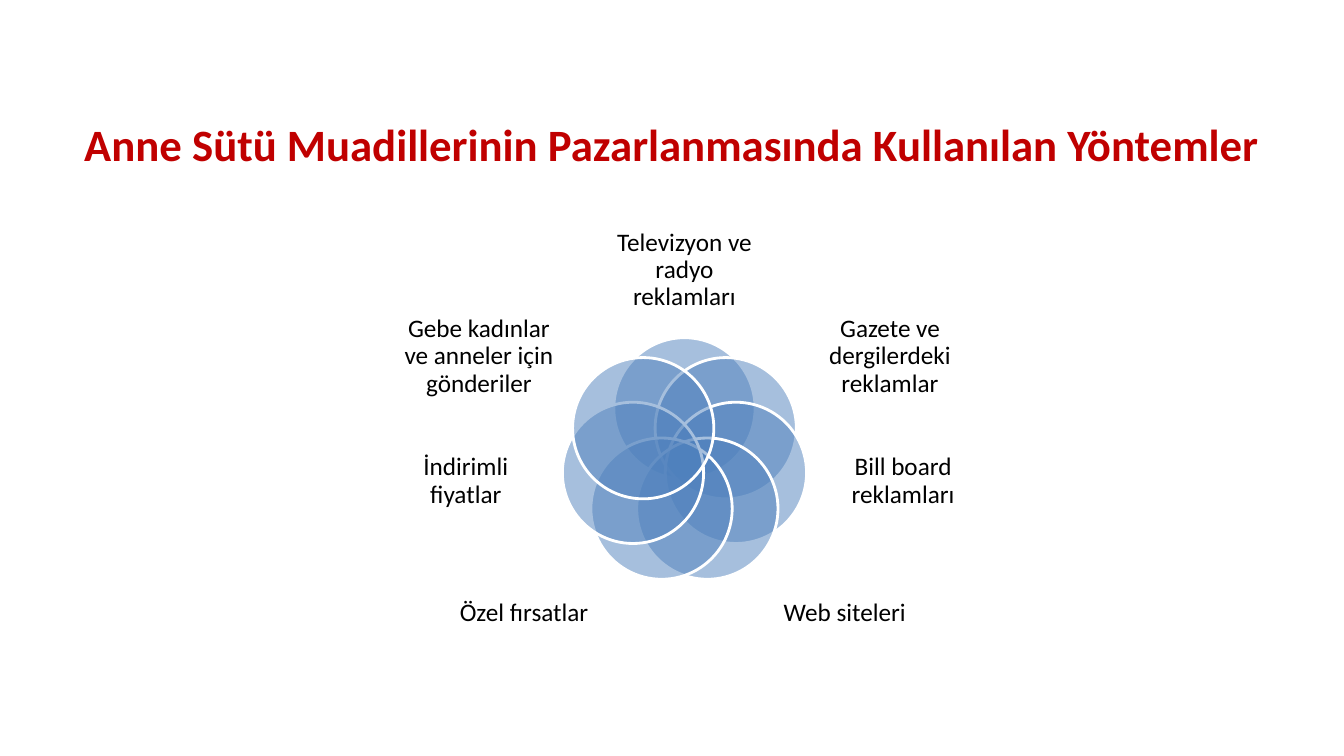
from dataclasses import dataclass
from math import cos, pi, sin

from lxml.etree import SubElement
from pptx import Presentation
from pptx.dml.color import RGBColor
from pptx.enum.shapes import MSO_SHAPE
from pptx.enum.text import MSO_ANCHOR, PP_ALIGN
from pptx.oxml.ns import qn
from pptx.util import Cm, Pt


@dataclass(frozen=True)
class Theme:
    font: str = "Calibri"
    title_color: RGBColor = RGBColor(0xC0, 0x00, 0x00)
    label_color: RGBColor = RGBColor(0x00, 0x00, 0x00)
    petal_color: RGBColor = RGBColor(0x4F, 0x81, 0xBD)
    outline_color: RGBColor = RGBColor(0xFF, 0xFF, 0xFF)
    petal_opacity: int = 50  # percent
    title_size: Pt = Pt(32)
    label_size: Pt = Pt(18)
    outline_width: Pt = Pt(2)


THEME = Theme()

TITLE = "Anne Sütü Muadillerinin Pazarlanmasında Kullanılan Yöntemler"
METHODS = [
    "Televizyon ve radyo reklamları",
    "Gazete ve dergilerdeki reklamlar",
    "Bill board reklamları",
    "Web siteleri",
    "Özel fırsatlar",
    "İndirimli fiyatlar",
    "Gebe kadınlar ve anneler için gönderiler",
]

# Label centre from the ring centre, then width and height, in cm.
# The top label comes first, then the right side; the left side mirrors it.
TOP_AND_RIGHT = [
    (0, -4.81, 4.06, 2.18),
    (5.18, -2.63, 3.86, 2.39),
    (5.51, 0.51, 3.78, 2.57),
    (4.04, 3.83, 4.06, 2.34),
]
LABEL_SLOTS = TOP_AND_RIGHT + [
    (-dx, dy, width, height) for dx, dy, width, height in reversed(TOP_AND_RIGHT[1:])
]

RING_DEPTH = 5.9  # ring centre below the top of the diagram
RING_RADIUS = 1.33
PETAL_SIZE = 3.56


def centred_box(x, y, width, height):
    return Cm(x - width / 2), Cm(y - height / 2), Cm(width), Cm(height)


def add_centred_text(slide, box, text, size, color):
    frame = slide.shapes.add_textbox(*box).text_frame
    frame.word_wrap = True
    frame.vertical_anchor = MSO_ANCHOR.MIDDLE
    paragraph = frame.paragraphs[0]
    paragraph.text = text
    paragraph.alignment = PP_ALIGN.CENTER
    paragraph.font.name = THEME.font
    paragraph.font.size = size
    paragraph.font.color.rgb = color
    return frame


def add_title(slide, left, top, width, height):
    box = Cm(left), Cm(top), Cm(width), Cm(height)
    title = add_centred_text(slide, box, TITLE, THEME.title_size, THEME.title_color)
    title.paragraphs[0].font.bold = True


def add_petal(slide, x, y):
    """Draw one see-through circle centred on x, y."""
    petal = slide.shapes.add_shape(
        MSO_SHAPE.OVAL, *centred_box(x, y, PETAL_SIZE, PETAL_SIZE))
    petal.shadow.inherit = False
    petal.fill.solid()
    petal.fill.fore_color.rgb = THEME.petal_color
    color = petal.fill._xPr.find(qn("a:solidFill"))[0]
    SubElement(color, qn("a:alpha")).set("val", str(THEME.petal_opacity * 1000))
    petal.line.color.rgb = THEME.outline_color
    petal.line.width = THEME.outline_width


def add_label(slide, box, text):
    label = add_centred_text(slide, box, text, THEME.label_size, THEME.label_color)
    label.margin_left = label.margin_right = 0
    label.margin_top = label.margin_bottom = 0
    label.paragraphs[0].line_spacing = 0.9


def add_methods_ring(slide, left, top, width):
    """Place overlapping petals clockwise from the top, each with its label."""
    ring_x, ring_y = left + width / 2, top + RING_DEPTH
    for index, (method, slot) in enumerate(zip(METHODS, LABEL_SLOTS)):
        angle = 2 * pi * index / len(METHODS)
        add_petal(slide, ring_x + RING_RADIUS * sin(angle),
                  ring_y - RING_RADIUS * cos(angle))
        dx, dy, label_width, label_height = slot
        box = centred_box(ring_x + dx, ring_y + dy, label_width, label_height)
        add_label(slide, box, method)


def main():
    deck = Presentation()
    deck.slide_width, deck.slide_height = Cm(33.87), Cm(19.05)
    slide = deck.slides.add_slide(deck.slide_layouts[6])
    add_title(slide, left=1.7, top=2.03, width=30.48, height=3.18)
    add_methods_ring(slide, left=9.85, top=5.72, width=14.8)
    deck.save("out.pptx")


if __name__ == "__main__":
    main()
